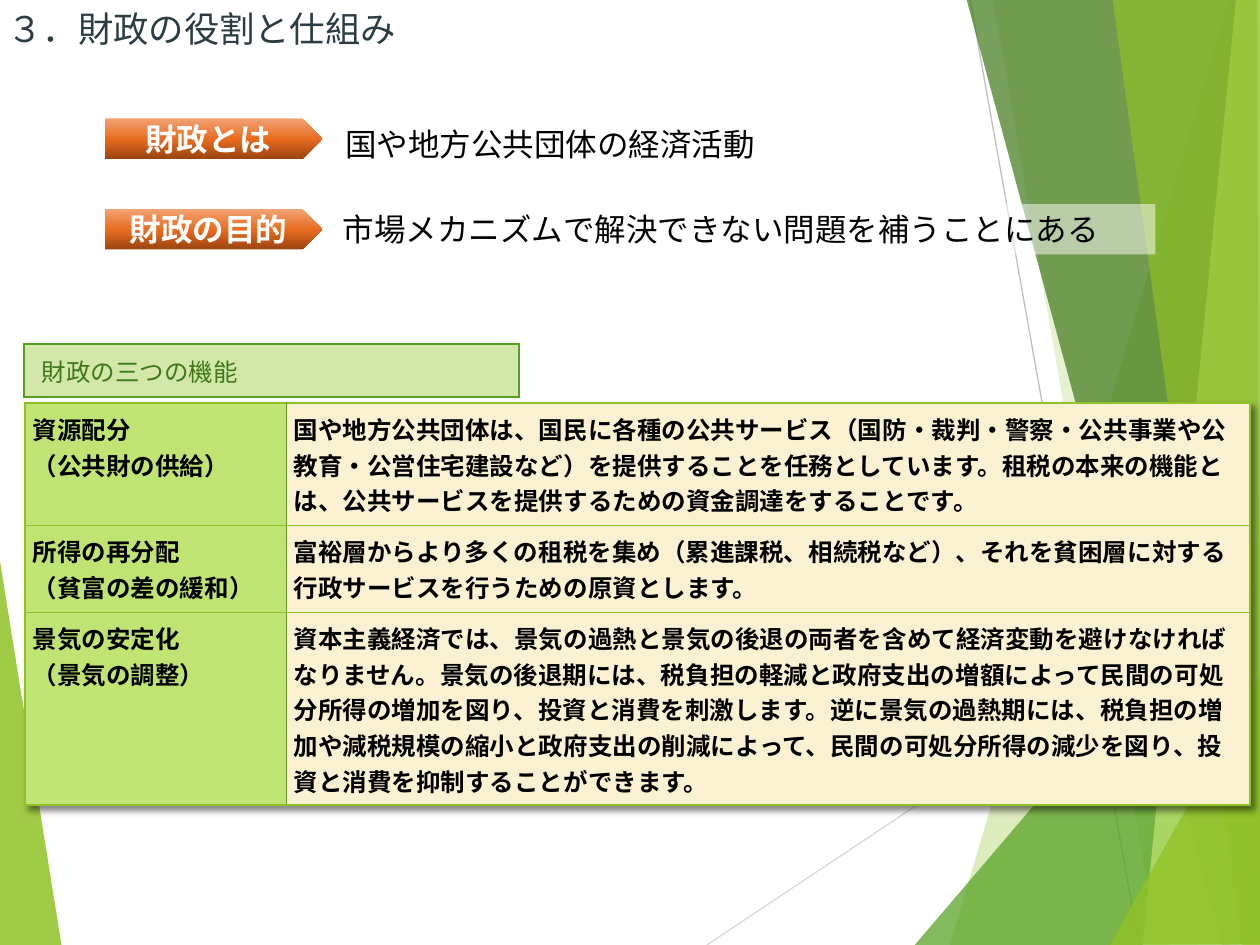
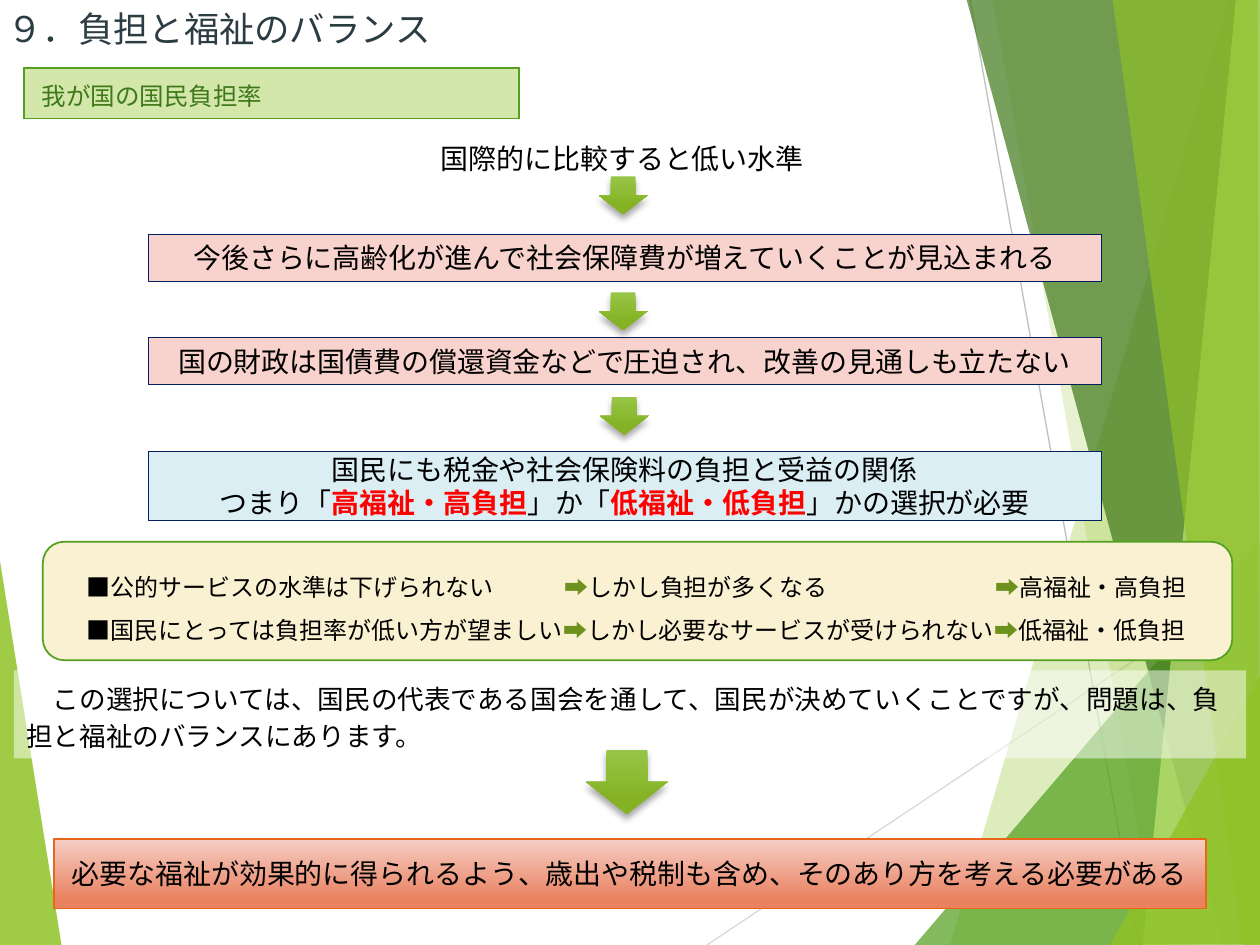
from lxml import etree
from pptx import Presentation, util as u
from pptx.dml.color import RGBColor
from pptx.enum import shapes, text
from pptx.oxml.ns import qn


class Theme:
    face = "Noto Sans CJK JP"
    lime, green, dark, pale = "90C226", "54A021", "3F7819", "C0E474"
    olive, mint, cream = "6C921D", "D2E7A9", "FAF1D2"
    slate, black, white, red = "2C3C43", "000000", "FFFFFF", "FF0000"
    pink, sky, navy, rust = "F8D2CC", "DAEEF3", "002060", "E76618"
    silver, gray = "D9D9D9", "BFBFBF"
    flame = [(0, "F1A374"), (52, "E86B1F"), (100, "9B4410")]
    leaf = [(0, "97C547"), (78, "84B223")]
    blush = [(0, "F5CEC5"), (88, "EA815F")]
    title, lead, body, note, cell, item = 20.2, 18, 16, 15.2, 14, 13.7


T = Theme
RECT = shapes.MSO_SHAPE.RECTANGLE
DOWN = shapes.MSO_SHAPE.DOWN_ARROW
MID = text.PP_ALIGN.CENTER
LEFT = text.PP_ALIGN.LEFT


def write(frame, lines, size, color=T.black, bold=False, align=LEFT, gap=None, pad=(0.1, 0)):
    """Fill a frame; a line is a string or a list of (words, colour, bold) runs."""
    frame.word_wrap = True
    frame.vertical_anchor = text.MSO_ANCHOR.MIDDLE
    frame.margin_left = frame.margin_right = u.Inches(pad[0])
    frame.margin_top = frame.margin_bottom = u.Inches(pad[1])
    for i, line in enumerate(lines):
        para = frame.add_paragraph() if i else frame.paragraphs[0]
        para.alignment = align
        if gap:
            para.line_spacing = gap
        font = para.font
        font.size, font.bold = u.Pt(size), bold
        font.color.rgb = RGBColor.from_string(color)
        font.name = T.face
        etree.SubElement(font._rPr, qn("a:ea"), typeface=T.face)
        for words, tint, heavy in [(line, None, None)] if isinstance(line, str) else line:
            run = para.add_run()
            run.text = words
            if tint:
                run.font.color.rgb = RGBColor.from_string(tint)
            if heavy:
                run.font.bold = True


def paint(shape, fill, alpha=100, line=None, width=1):
    """Set fill (a colour or gradient stops running downwards) and outline."""
    shape.shadow.inherit = False
    props = shape._element.spPr
    if isinstance(fill, str):
        shape.fill.solid()
        shape.fill.fore_color.rgb = RGBColor.from_string(fill)
        if alpha < 100:
            tint = props.find(".//" + qn("a:srgbClr"))
            etree.SubElement(tint, qn("a:alpha"), val=str(alpha * 1000))
    else:
        shape.fill.gradient()
        shape.fill.gradient_angle = 270
        stops = props.find(".//" + qn("a:gsLst"))
        stops.clear()
        for pos, color in fill:
            stop = etree.SubElement(stops, qn("a:gs"), pos=str(pos * 1000))
            etree.SubElement(stop, qn("a:srgbClr"), val=color)
    if line:
        shape.line.color.rgb = RGBColor.from_string(line)
        shape.line.width = u.Pt(width)
    else:
        shape.line.fill.background()
    return shape


deck = Presentation()
deck.slide_width, deck.slide_height = u.Inches(10), u.Inches(7.5)
role, load = [deck.slides.add_slide(deck.slide_layouts[6]) for _ in range(2)]

# Shared backdrop: two points make a line, more make a band
bands = [
    (T.lime, 85, [(-0.01, 4.39), (0.49, 7.51), (-0.01, 7.5)]),
    (T.silver, 100, [(5.61, 7.5), (10.01, 4.57)]),
    (T.gray, 100, [(7.7, 0), (9.04, 7.5)]),
    (T.lime, 30, [(9.75, 0), (7.54, 7.5), (10.02, 7.51), (10.01, 0.01)]),
    (T.lime, 20, [(7.88, -0.01), (9.19, 7.5), (10.01, 7.5), (10.01, -0.01)]),
    (T.green, 72, [(7.26, 7.5), (10, 4.29), (10.01, 7.5)]),
    (T.dark, 70, [(7.67, -0.01), (9.7, 7.5), (10.01, 7.49), (10.01, -0.01)]),
    (T.pale, 70, [(9.81, -0.01), (9.07, 7.5), (10.01, 7.5), (10, -0.01)]),
    (T.lime, 65, [(8.83, -0.01), (9.86, 7.5), (10, 7.5), (9.98, -0.01)]),
    (T.lime, 80, [(8.81, 7.5), (10.01, 5.35), (10.01, 7.49)]),
]
for slide, title in ((role, "３．財政の役割と仕組み"), (load, "９．負担と福祉のバランス")):
    for color, alpha, dots in bands:
        dots = [(u.Inches(x), u.Inches(y)) for x, y in dots]
        if len(dots) == 2:
            rule = slide.shapes.add_connector(shapes.MSO_CONNECTOR.STRAIGHT, *dots[0], *dots[1])
            rule.line.color.rgb = RGBColor.from_string(color)
            rule.line.width = u.Pt(0.75)
            etree.SubElement(rule._element.spPr, qn("a:effectLst"))
        else:
            pen = slide.shapes.build_freeform(*dots[0])
            pen.add_line_segments(dots[1:])
            paint(pen.convert_to_shape(), color, alpha)
    head = slide.shapes.add_textbox(0, 0, u.Inches(4), u.Inches(0.45))
    write(head.text_frame, [title], T.title, T.slate, pad=(0.06, 0))

# Tables: section headings and the three functions
tasks = [
    (["資源配分", "（公共財の供給）"],
     ["国や地方公共団体は、国民に各種の公共サービス（国防・裁判・警察・公共事業や公教育・公営住宅建設など）を"
      "提供することを任務としています。租税の本来の機能とは、公共サービスを提供するための資金調達をすることです。"]),
    (["所得の再分配", "（貧富の差の緩和）"],
     ["富裕層からより多くの租税を集め（累進課税、相続税など）、それを貧困層に対する行政サービスを行うための"
      "原資とします。"]),
    (["景気の安定化", "（景気の調整）"],
     ["資本主義経済では、景気の過熱と景気の後退の両者を含めて経済変動を避けなければなりません。景気の後退期には、"
      "税負担の軽減と政府支出の増額によって民間の可処分所得の増加を図り、投資と消費を刺激します。逆に景気の過熱期には、"
      "税負担の増加や減税規模の縮小と政府支出の削減によって、民間の可処分所得の減少を図り、投資と消費を抑制することができます。"]),
]
grids = [
    (role, 0.19, 2.73, [3.93], [0.42], [[["財政の三つの機能"]]]),
    (load, 0.19, 0.54, [3.93], [0.4], [[["我が国の国民負担率"]]]),
    (role, 0.2, 3.2, [2.07, 7.65], [0.97, 0.69, 1.53], tasks),
]
for slide, x, y, cols, rows, cells in grids:
    label = len(cols) == 1
    table = slide.shapes.add_table(len(rows), len(cols), u.Inches(x), u.Inches(y),
                                   u.Inches(sum(cols)), u.Inches(sum(rows))).table
    table.first_row = table.horz_banding = False
    for col, wide in zip(table.columns, cols):
        col.width = u.Inches(wide)
    for row, high in zip(table.rows, rows):
        row.height = u.Inches(high)
    for r, row in enumerate(cells):
        for c, lines in enumerate(row):
            cell = table.cell(r, c)
            write(cell.text_frame, lines, T.cell, T.dark if label else T.black, not label)
            cell.vertical_anchor = text.MSO_ANCHOR.TOP
            cell.margin_left = cell.margin_right = u.Inches(0.14 if label else 0.06)
            cell.margin_top = cell.margin_bottom = u.Inches(0.07 if label else 0.06)
            props = cell._tc.get_or_add_tcPr()
            for side in "LRTB":
                inner = not label and side == "RL"[c]
                edge = etree.SubElement(props, qn("a:ln" + side), w=str(u.Pt(0.25 if inner else 1)))
                solid = etree.SubElement(edge, qn("a:solidFill"))
                color = T.green if label else T.olive if inner else T.lime
                etree.SubElement(solid, qn("a:srgbClr"), val=color)
            cell.fill.solid()
            cell.fill.fore_color.rgb = RGBColor.from_string(
                T.mint if label else (T.pale, T.cream)[c])

# The three-function table and the arrows cast shadows
casts = []
glow = etree.Element(qn("a:effectLst"))
table._tbl.tblPr.insert(0, glow)
casts.append((glow, 45, 50))

# Slide 1: definition and aim
for y, name, x, top, wide, words in (
        (0.94, "財政とは", 2.64, 0.94, 4.37, "国や地方公共団体の経済活動"),
        (1.66, "財政の目的", 2.62, 1.62, 6.55, "市場メカニズムで解決できない問題を補うことにある")):
    at = [u.Inches(v) for v in (x, top, wide, 0.4)]
    if wide > 5:
        box = paint(role.shapes.add_shape(RECT, *at), T.white, 50)
    else:
        box = role.shapes.add_textbox(*at)
    write(box.text_frame, [words], T.lead)
    tag = role.shapes.add_shape(shapes.MSO_SHAPE.PENTAGON, u.Inches(0.83), u.Inches(y),
                                u.Inches(1.73), u.Inches(0.32))
    write(paint(tag, T.flame).text_frame, [name], T.lead, T.white, True, MID)

# Slide 2: the choice
veil = load.shapes.add_shape(RECT, u.Inches(0.11), u.Inches(5.32), u.Inches(9.78), u.Inches(0.7))
write(paint(veil, T.white, 50).text_frame,
      ["この選択については、国民の代表である国会を通して、国民が決めていくことですが、問題は、"
       "負担と福祉のバランスにあります。"], T.note, gap=u.Pt(21.6))
veil.text_frame.paragraphs[0]._p.get_or_add_pPr().set("indent", str(u.Pt(T.note)))

panel = load.shapes.add_shape(shapes.MSO_SHAPE.ROUNDED_RECTANGLE, u.Inches(0.34), u.Inches(4.3),
                              u.Inches(9.44), u.Inches(0.94))
panel.adjustments[0] = 0.18
paint(panel, T.cream, line=T.green)
sign = ("➡", T.olive, False)
pairs = [("■公的サービスの水準は下げられない\t", "しかし負担が多くなる\t", "高福祉・高負担"),
         ("■国民にとっては負担率が低い方が望ましい", "しかし必要なサービスが受けられない", "低福祉・低負担")]
write(panel.text_frame,
      [[(a, None, False), sign, (b, None, False), sign, (c, None, False)] for a, b, c in pairs],
      T.item, gap=1.5, pad=(0.3, 0.05))
panel.text_frame.margin_right = 0
props = panel.text_frame.paragraphs[0]._p.get_or_add_pPr()
tabs = etree.Element(qn("a:tabLst"))
for stop in (3.79, 7.21):
    etree.SubElement(tabs, qn("a:tab"), pos=str(u.Inches(stop)), algn="l")
props.find(qn("a:defRPr")).addprevious(tabs)

# Slide 2: the chain of reasons
lead = load.shapes.add_textbox(u.Inches(3.17), u.Inches(1.07), u.Inches(3.54), u.Inches(0.37))
write(lead.text_frame, ["国際的に比較すると低い水準"], T.body, align=MID)
choice = [("つまり「", None, False), ("高福祉・高負担", T.red, True), ("」か「", None, False),
          ("低福祉・低負担", T.red, True), ("」かの選択が必要", None, False)]
steps = [
    (1.18, 1.86, 7.56, 0.37, T.pink, T.navy, 0.25,
     ["今後さらに高齢化が進んで社会保障費が増えていくことが見込まれる"]),
    (1.18, 2.68, 7.56, 0.37, T.pink, T.navy, 0.25,
     ["国の財政は国債費の償還資金などで圧迫され、改善の見通しも立たない"]),
    (1.18, 3.58, 7.56, 0.55, T.sky, T.navy, 0.25,
     ["国民にも税金や社会保険料の負担と受益の関係", choice]),
    (0.43, 6.66, 9.14, 0.55, T.blush, T.rust, 1,
     ["必要な福祉が効果的に得られるよう、歳出や税制も含め、そのあり方を考える必要がある"]),
]
for *at, fill, line, width, lines in steps:
    box = load.shapes.add_shape(RECT, *[u.Inches(v) for v in at])
    paint(box, fill, line=line, width=width)
    gap = u.Pt(18.9) if len(lines) > 1 else None
    write(box.text_frame, lines, T.body, align=MID, gap=gap, pad=(0.08, 0.01))

for at in ((4.75, 1.4, 0.39, 0.3), (4.75, 2.32, 0.39, 0.3),
           (4.76, 3.15, 0.39, 0.3), (4.65, 5.95, 0.65, 0.51)):
    arrow = paint(load.shapes.add_shape(DOWN, *[u.Inches(v) for v in at]), T.leaf)
    casts.append((arrow._element.spPr.find(qn("a:effectLst")), 90, 35))

for glow, angle, alpha in casts:
    drop = etree.SubElement(glow, qn("a:outerShdw"), blurRad=str(u.Pt(4)), dist=str(u.Pt(3)),
                            dir=str(angle * 60000), rotWithShape="0")
    tint = etree.SubElement(drop, qn("a:srgbClr"), val=T.black)
    etree.SubElement(tint, qn("a:alpha"), val=str(alpha * 1000))

deck.save("out.pptx")
